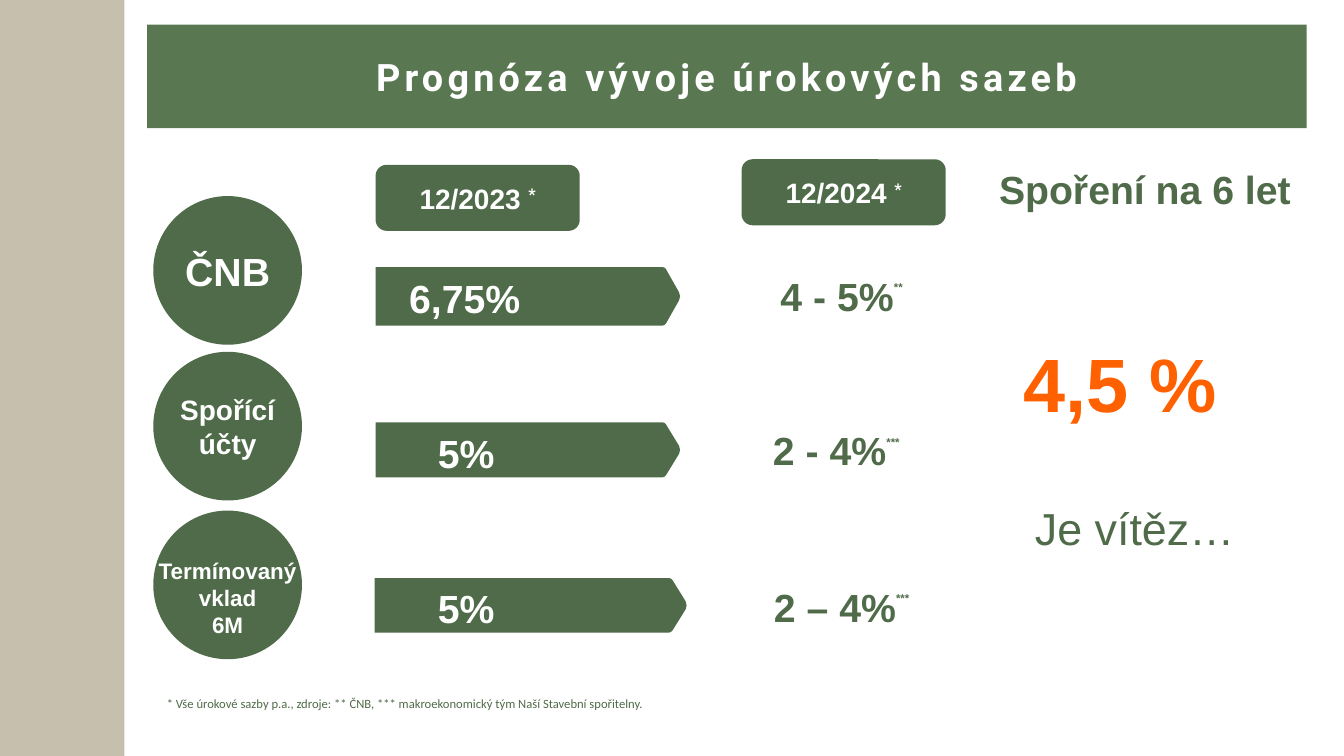
from pptx import Presentation
from pptx.dml.color import RGBColor
from pptx.enum.shapes import MSO_SHAPE as Kind
from pptx.enum.text import MSO_ANCHOR as Anchor, MSO_AUTO_SIZE as Fit, PP_ALIGN as Align
from pptx.util import Inches, Pt

HUES = {"green": "506B49", "band": "597751", "sand": "C7BFAD",
        "white": "FFFFFF", "orange": "FF6000"}
FLUSH = {"margin_left": 0, "margin_right": 0, "margin_top": 0, "margin_bottom": 0}
TIGHT = {**FLUSH, "word_wrap": False}
MIDDLE = {"vertical_anchor": Anchor.MIDDLE}


def hue(name):
    return RGBColor.from_string(HUES[name])


def adjust(item, values):
    for key, value in values.items():
        setattr(item, key, value)


class Deck:
    def __init__(self, wide, high):
        self.prs = Presentation()
        adjust(self.prs, {"slide_width": Inches(wide), "slide_height": Inches(high)})
        self.slide = self.prs.slides.add_slide(self.prs.slide_layouts[6])

    def paint(self, shape, fill):
        shape.shadow.inherit = False
        shape.line.fill.background()
        if fill:
            shape.fill.solid()
            shape.fill.fore_color.rgb = hue(fill)
        else:
            shape.fill.background()

    def span(self, para, text, size, color="white", bold=True, face="Arial", **extra):
        """Add a run; extra holds raw attributes such as baseline and spc."""
        run = para.add_run()
        run.text = text
        adjust(run.font, {"size": Pt(size), "bold": bold, "name": face})
        run.font.color.rgb = hue(color)
        for key, value in extra.items():
            run._r.get_or_add_rPr().set(key, str(value))

    def words(self, frame, lines, form, align=Align.CENTER, after=0):
        """Fill a frame; each line is a list of (text, format) runs."""
        adjust(frame, form)
        for num, line in enumerate(lines):
            para = frame.add_paragraph() if num else frame.paragraphs[0]
            adjust(para, {"alignment": align, "space_after": Pt(after)})
            for text, style in line:
                self.span(para, text, **style)

    def shape(self, kind, box, fill=None, lines=(), **form):
        shape = self.slide.shapes.add_shape(kind, *map(Inches, box))
        self.paint(shape, fill)
        self.words(shape.text_frame, lines, {"word_wrap": True, **MIDDLE, **form})

    def label(self, box, text, style, align=Align.CENTER, after=0, **form):
        frame = self.slide.shapes.add_textbox(*map(Inches, box)).text_frame
        grow = {"word_wrap": True, "auto_size": Fit.SHAPE_TO_FIT_TEXT}
        self.words(frame, [[(text, style)]], {**grow, **form}, align, after)

    def arrow(self, left, top, wide, high):
        """Draw a bar with a rounded point on its right."""
        end, mid = left + wide, high / 2
        half = [(left, 0), (end - .35, 0), (end - .31, .01), (end - .28, .04),
                (end - .02, mid - .08), (end - .01, mid - .04)]
        dots = half + [(end, mid)] + [(x, high - y) for x, y in reversed(half)]
        spots = [(Inches(x), Inches(top + y)) for x, y in dots]
        form = self.slide.shapes.build_freeform(*spots[0])
        form.add_line_segments(spots[1:], close=True)
        self.paint(form.convert_to_shape(), "green")


def main():
    deck = Deck(26.66, 15)

    for bar in [(7.45, 8.38, 6.04, 1.09), (7.43, 11.47, 6.19, 1.08),
                (7.45, 5.3, 6.04, 1.16)]:
        deck.arrow(*bar)

    big = {"size": 56}
    dark = {"size": 56, "color": "green"}
    mark = {"size": 28, "color": "green", "baseline": 100000}
    rates = [
        ((7.21, 5.05, 4.02, 1.72), "6,75%", (14.46, 4.98, 4.47, 1.78), "4 - 5%", "**"),
        ((7.27, 8.12, 3.96, 1.72), "5%", (14.46, 8.04, 4.26, 1.78), "2 - 4%", "***"),
        ((7.27, 11.19, 3.96, 1.72), "5%", (14.46, 11.14, 4.47, 1.78), "2 – 4%", "***"),
    ]
    for now, rate, later, guess, note in rates:
        deck.shape(Kind.OVAL, now, lines=[[(rate, big)]])
        deck.shape(Kind.OVAL, later, lines=[[(guess, dark), (note, mark)]])

    star = {"size": 40, "face": "Roboto", "baseline": 30000, "spc": 600}
    for left, top, date in [(7.45, 3.27, "12/2023 "), (14.71, 3.16, "12/2024 ")]:
        deck.shape(Kind.ROUNDED_RECTANGLE, (left, top, 4.05, 1.31), "green",
                   [[(date, {"size": 40}), ("*", star)]], **TIGHT)

    deck.label((19.69, 6.68, 5.05, 1.82), "4,5 %", {"size": 108, "color": "orange"},
               after=36, **FLUSH, **MIDDLE)
    deck.label((18.76, 9.93, 7.49, 1.08), "Je vítěz…",
               {"size": 64, "color": "green", "bold": False}, after=36, **FLUSH, **MIDDLE)

    discs = [(3.89, 56, ["ČNB"], 0), (6.98, 40, ["Spořící", "účty"], 0),
             (10.13, 32, ["Termínovaný", "vklad", "6M"], .51)]
    for top, size, words, drop in discs:
        lines = [[(word, {"size": size})] for word in words]
        deck.shape(Kind.OVAL, (3.04, top, 2.95, 2.95), "green", lines,
                   **{**TIGHT, "margin_top": Inches(drop)})

    deck.label((19.35, 3.23, 6.73, 1.04), "Spoření na 6 let", dark)
    title = {"size": 54, "face": "Roboto", "spc": 600}
    deck.shape(Kind.RECTANGLE, (2.92, .49, 23, 2.05), "band",
               [[("Prognóza vývoje úrokových sazeb", title)]])
    deck.shape(Kind.RECTANGLE, (0, 0, 2.47, 15), "sand")
    deck.label((3.21, 13.76, 11.5, .4),
               "* Vše úrokové sazby p.a., zdroje: ** ČNB, "
               "*** makroekonomický tým Naší Stavební spořitelny.",
               {"size": 18, "color": "green", "bold": False, "face": "Calibri"}, Align.LEFT)

    deck.prs.save("out.pptx")


if __name__ == "__main__":
    main()
